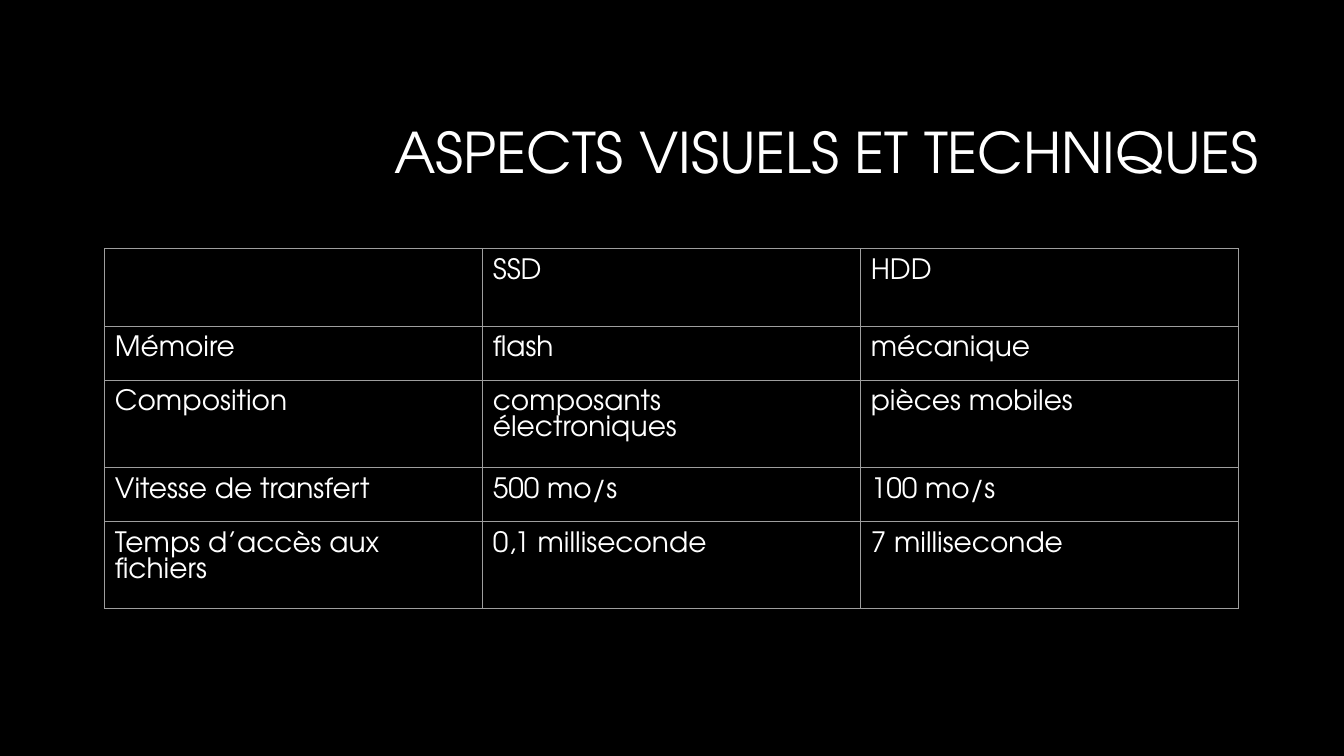
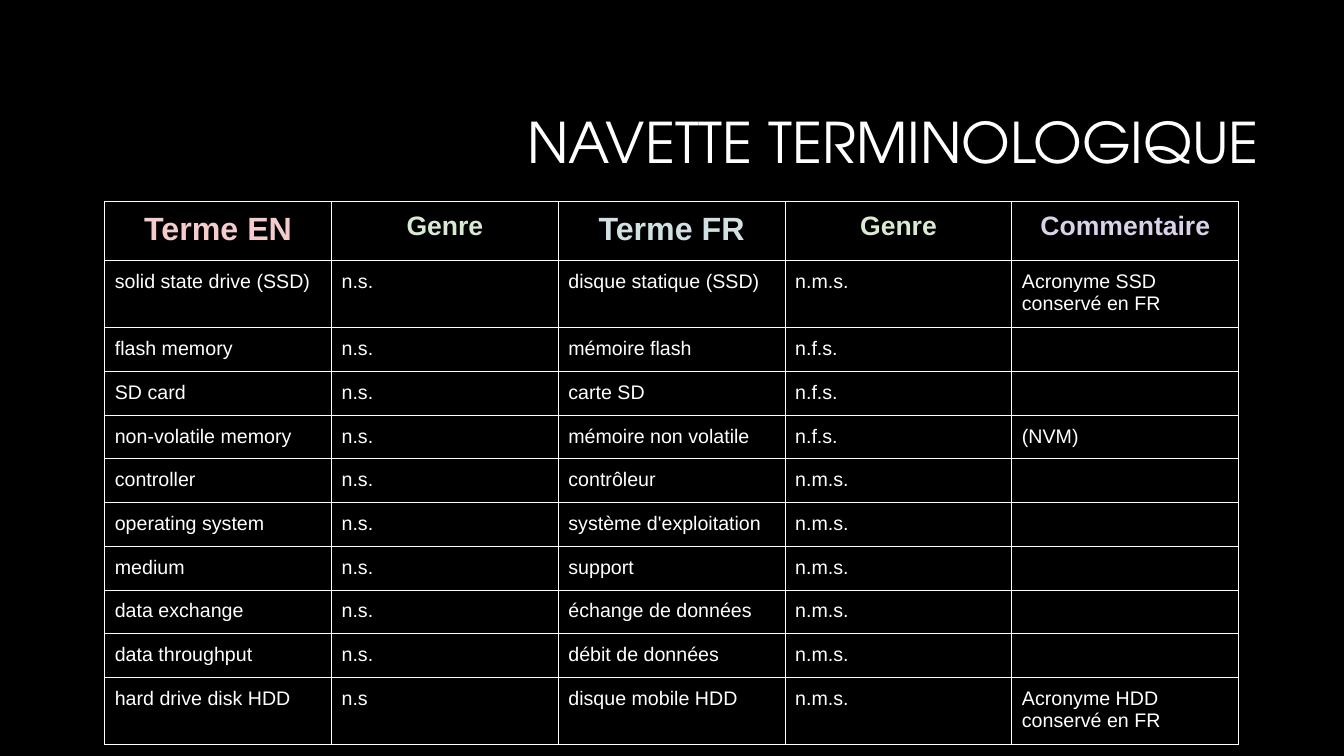
from lxml import etree
from pptx import Presentation
from pptx.dml.color import RGBColor
from pptx.enum import text
from pptx.oxml import ns
from pptx.util import Cm, Pt

BLACK, WHITE, GREY = "000000", "FFFFFF", "9E9E9E"
DISPLAY, BODY = "TeX Gyre Adventor", "Arial"
LEFT, WIDTH, PAD = 2.64, 28.58, 0.254

DRIVES = [
    ("", "SSD", "HDD"),
    ("Mémoire", "flash", "mécanique"),
    ("Composition", "composants électroniques", "pièces mobiles"),
    ("Vitesse de transfert", "500 mo/s", "100 mo/s"),
    ("Temps d’accès aux fichiers", "0,1 milliseconde", "7 milliseconde"),
]
TERMS = [
    ("Terme EN", "Genre", "Terme FR", "Genre", "Commentaire"),
    ("solid state drive (SSD)", "n.s.", "disque statique (SSD)", "n.m.s.",
     "Acronyme SSD conservé en FR"),
    ("flash memory", "n.s.", "mémoire flash", "n.f.s.", ""),
    ("SD card", "n.s.", "carte SD", "n.f.s.", ""),
    ("non-volatile memory", "n.s.", "mémoire non volatile", "n.f.s.", "(NVM)"),
    ("controller", "n.s.", "contrôleur", "n.m.s.", ""),
    ("operating system", "n.s.", "système d'exploitation", "n.m.s.", ""),
    ("medium", "n.s.", "support", "n.m.s.", ""),
    ("data exchange", "n.s.", "échange de données", "n.m.s.", ""),
    ("data throughput", "n.s.", "débit de données", "n.m.s.", ""),
    ("hard drive disk HDD", "n.s", "disque mobile HDD", "n.m.s.",
     "Acronyme HDD conservé en FR"),
]
# Size and colour of each heading in the term table
HEADS = [(23, "F4CCCC"), (19, "D9EAD3"), (23, "D0E0E3"), (19, "D9EAD3"),
         (19, "D9D2E9")]

SLIDES = [
    dict(title="ASPECTS VISUELS ET TECHNIQUES", title_top=2.13, top=6.27,
         rows=DRIVES, heights=[1.95, 1.16, 1.83, 1.16, 1.83],
         font=DISPLAY, size=20, line=GREY, heads=None),
    dict(title="NAVETTE TERMINOLOGIQUE", title_top=1.88, top=5.08,
         rows=TERMS, heights=[1.41, 1.63] + [1.06] * 8 + [1.63],
         font=BODY, size=14, line=WHITE, heads=HEADS),
]


def rgb(code):
    return RGBColor.from_string(code)


def add_run(par, words, font, size, color=WHITE, bold=False):
    run = par.add_run()
    run.text = words
    run.font.name, run.font.size, run.font.bold = font, Pt(size), bold
    run.font.color.rgb = rgb(color)


def add_title(slide, words, top):
    box = slide.shapes.add_textbox(Cm(8.05), Cm(top), Cm(23.93), Cm(3.58))
    frame = box.text_frame
    frame.word_wrap = True
    frame.vertical_anchor = text.MSO_ANCHOR.MIDDLE
    par = frame.paragraphs[0]
    par.alignment = text.PP_ALIGN.RIGHT
    par.line_spacing = 0.9
    add_run(par, words, DISPLAY, 40)


def add_borders(cell, color):
    props = cell._tc.get_or_add_tcPr()
    for side in ("lnL", "lnR", "lnT", "lnB"):
        line = etree.SubElement(props, ns.qn("a:" + side), w=str(Pt(0.75)))
        fill = etree.SubElement(line, ns.qn("a:solidFill"))
        etree.SubElement(fill, ns.qn("a:srgbClr"), val=color)


def fill_cell(cell, words, look, head):
    cell.margin_left = cell.margin_right = Cm(PAD)
    cell.margin_top = cell.margin_bottom = Cm(PAD)
    add_borders(cell, look["line"])
    cell.fill.background()
    par = cell.text_frame.paragraphs[0]
    if not words:
        # An empty cell keeps the body size, so its row stays low
        etree.SubElement(par._p, ns.qn("a:endParaRPr"),
                         sz=str(look["size"] * 100))
    elif head:
        par.alignment = text.PP_ALIGN.CENTER
        add_run(par, words, look["font"], *head, bold=True)
    else:
        add_run(par, words, look["font"], look["size"])


def add_grid(slide, look):
    rows, heights = look["rows"], look["heights"]
    count = len(rows[0])
    table = slide.shapes.add_table(
        len(rows), count, Cm(LEFT), Cm(look["top"]),
        Cm(WIDTH), Cm(sum(heights))).table
    table.first_row = table.horz_banding = False
    for col in table.columns:
        col.width = Cm(WIDTH / count)
    for r, (row, height) in enumerate(zip(rows, heights)):
        table.rows[r].height = Cm(height)
        for c, words in enumerate(row):
            head = look["heads"][c] if look["heads"] and r == 0 else None
            fill_cell(table.cell(r, c), words, look, head)


def main():
    deck = Presentation()
    deck.slide_width, deck.slide_height = Cm(33.87), Cm(19.05)
    # Shared black background
    back = deck.slide_master.background.fill
    back.solid()
    back.fore_color.rgb = rgb(BLACK)
    for look in SLIDES:
        slide = deck.slides.add_slide(deck.slide_layouts[6])
        add_title(slide, look["title"], look["title_top"])
        add_grid(slide, look)
    deck.save("out.pptx")


if __name__ == "__main__":
    main()
